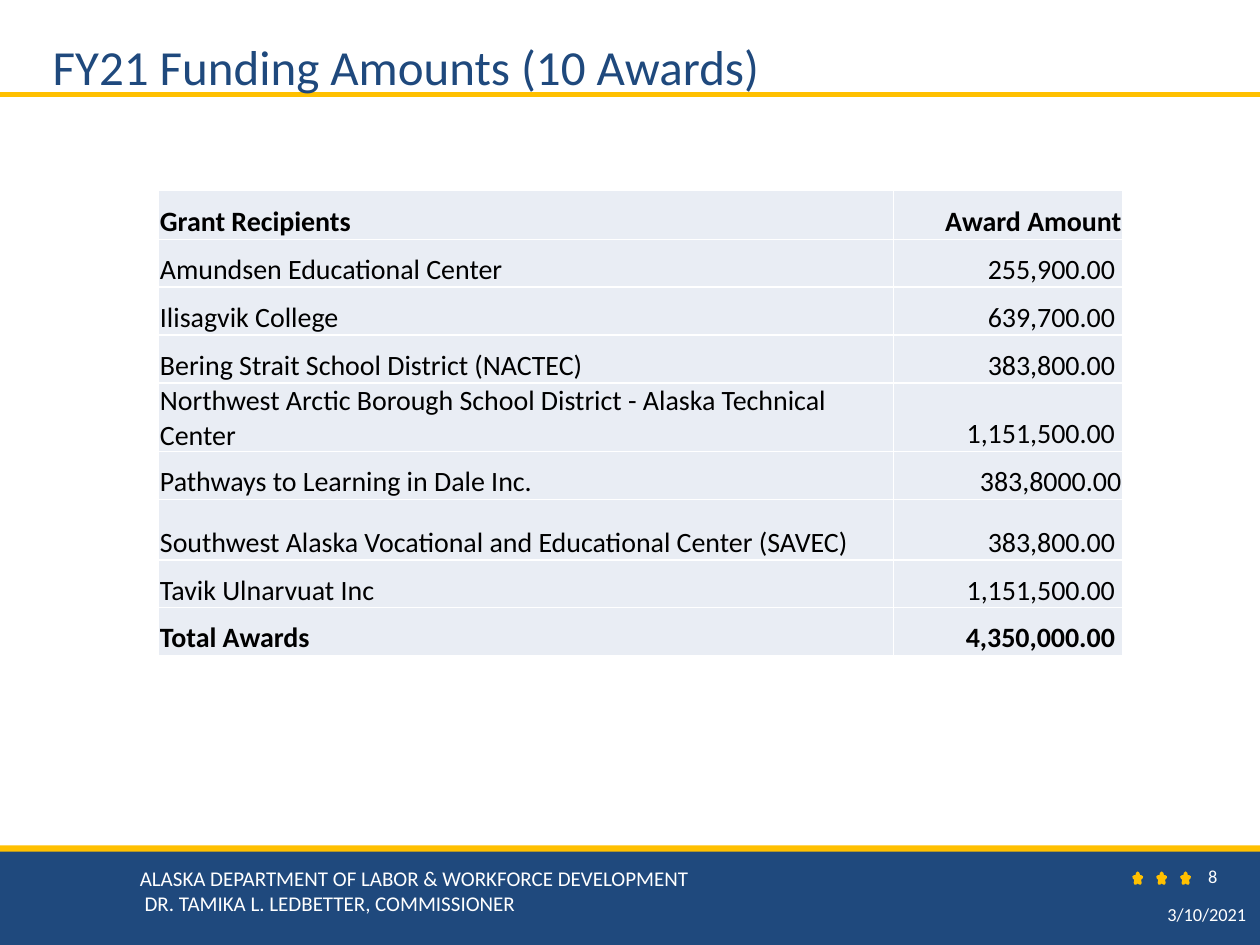
from dataclasses import dataclass

from lxml.etree import SubElement
from pptx import Presentation
from pptx.dml.color import RGBColor
from pptx.enum.shapes import MSO_CONNECTOR, MSO_SHAPE
from pptx.enum.text import MSO_ANCHOR, PP_ALIGN
from pptx.oxml.ns import qn
from pptx.util import Inches, Pt

FONT = "Calibri"
NAVY, GOLD, WHITE, BLACK, PALE = "1F497D", "FFC000", "FFFFFF", "000000", "E9EDF4"
COLUMN_WIDTHS = (5.83, 1.82)
ROW_HEIGHTS = (0.39, 0.38, 0.38, 0.38, 0.38, 0.38, 0.48, 0.38, 0.38)


@dataclass
class Award:
    recipient: str
    amount: str
    bold: bool = False


@dataclass
class Label:
    left: float
    top: float
    width: float
    height: float
    lines: tuple[str, ...]
    size: float
    color: str = WHITE
    align: PP_ALIGN = PP_ALIGN.LEFT
    anchor: MSO_ANCHOR = MSO_ANCHOR.TOP
    inset: bool = False


AWARDS = [
    Award("Grant Recipients", "Award Amount", True),
    Award("Amundsen Educational Center", "255,900.00 "),
    Award("Ilisagvik College", "639,700.00 "),
    Award("Bering Strait School District (NACTEC)", "383,800.00 "),
    Award("Northwest Arctic Borough School District - Alaska Technical Center",
          "1,151,500.00 "),
    Award("Pathways to Learning in Dale Inc.", "383,8000.00"),
    Award("Southwest Alaska Vocational and Educational Center (SAVEC)", "383,800.00 "),
    Award("Tavik Ulnarvuat Inc", "1,151,500.00 "),
    Award("Total Awards", "4,350,000.00 ", True),
]

LABELS = [
    Label(8.16, 7.13, 1.83, 0.25, ("3/10/2021",), 10.5, align=PP_ALIGN.RIGHT,
          anchor=MSO_ANCHOR.MIDDLE, inset=True),
    Label(1.11, 6.87, 5.72, 0.4,
          ("ALASKA DEPARTMENT OF LABOR & WORKFORCE DEVELOPMENT",
           " DR. TAMIKA L. LEDBETTER, COMMISSIONER"), 12),
    Label(9.19, 6.87, 0.87, 0.18, ("8",), 10.5, align=PP_ALIGN.CENTER),
    Label(0.32, 0.24, 7.11, 1.28, ("FY21 Funding Amounts (10 Awards)",), 28,
          color=NAVY, inset=True),
]


def rgb(color: str) -> RGBColor:
    return RGBColor.from_string(color)


def style_paragraph(paragraph, size: float, color: str, align: PP_ALIGN,
                    bold: bool = False) -> None:
    paragraph.alignment = align
    font = paragraph.font
    font.name, font.size, font.bold = FONT, Pt(size), bold
    font.color.rgb = rgb(color)


def add_filled(slide, kind: MSO_SHAPE, left: float, top: float, width: float,
               height: float, color: str, line_width: float = 0) -> None:
    shape = slide.shapes.add_shape(
        kind, Inches(left), Inches(top), Inches(width), Inches(height))
    shape.shadow.inherit = False
    shape.fill.solid()
    shape.fill.fore_color.rgb = rgb(color)
    if line_width:
        shape.line.color.rgb = rgb(color)
        shape.line.width = Pt(line_width)
    else:
        shape.line.fill.background()


def add_title_rule(slide) -> None:
    rule = slide.shapes.add_connector(
        MSO_CONNECTOR.STRAIGHT, Inches(0), Inches(0.75), Inches(10), Inches(0.75))
    rule.line.color.rgb = rgb(GOLD)
    rule.line.width = Pt(3)
    SubElement(rule._element.spPr, qn("a:effectLst"))


def add_label(slide, label: Label) -> None:
    box = slide.shapes.add_textbox(Inches(label.left), Inches(label.top),
                                   Inches(label.width), Inches(label.height))
    frame = box.text_frame
    frame.word_wrap = True
    frame.vertical_anchor = label.anchor
    if not label.inset:
        frame.margin_left = frame.margin_right = Inches(0)
        frame.margin_top = frame.margin_bottom = Inches(0)
    frame.text = "\n".join(label.lines)
    for paragraph in frame.paragraphs:
        style_paragraph(paragraph, label.size, label.color, label.align)


def add_borders(cell) -> None:
    """Put a thin white line on all four sides, ahead of the cell's fill."""
    properties = cell._tc.get_or_add_tcPr()
    for index, side in enumerate(("lnL", "lnR", "lnT", "lnB")):
        line = SubElement(properties, qn(f"a:{side}"), w=str(Pt(1)))
        fill = SubElement(line, qn("a:solidFill"))
        SubElement(fill, qn("a:srgbClr"), val=WHITE)
        properties.insert(index, line)


def fill_cell(cell, text: str, align: PP_ALIGN, bold: bool) -> None:
    cell.margin_left = cell.margin_right = cell.margin_top = Inches(0.01)
    cell.margin_bottom = Inches(0)
    cell.vertical_anchor = MSO_ANCHOR.BOTTOM
    cell.fill.solid()
    cell.fill.fore_color.rgb = rgb(PALE)
    add_borders(cell)
    cell.text = text
    style_paragraph(cell.text_frame.paragraphs[0], 16, BLACK, align, bold)


def add_award_table(slide) -> None:
    table = slide.shapes.add_table(
        len(AWARDS), len(COLUMN_WIDTHS), Inches(1.26), Inches(1.51),
        Inches(sum(COLUMN_WIDTHS)), Inches(sum(ROW_HEIGHTS))).table
    table.first_row = table.horz_banding = False
    for column, width in zip(table.columns, COLUMN_WIDTHS):
        column.width = Inches(width)
    for row, height, award in zip(table.rows, ROW_HEIGHTS, AWARDS):
        row.height = Inches(height)
        fill_cell(row.cells[0], award.recipient, PP_ALIGN.LEFT, award.bold)
        fill_cell(row.cells[1], award.amount, PP_ALIGN.RIGHT, award.bold)


def main() -> None:
    presentation = Presentation()
    presentation.slide_width, presentation.slide_height = Inches(10), Inches(7.5)
    slide = presentation.slides.add_slide(presentation.slide_layouts[6])
    add_filled(slide, MSO_SHAPE.RECTANGLE, 0, 6.74, 10, 0.76, NAVY)
    add_title_rule(slide)
    add_filled(slide, MSO_SHAPE.RECTANGLE, 0, 6.71, 10, 0.05, GOLD)
    for index in range(3):
        add_filled(slide, MSO_SHAPE.STAR_5_POINT, 9 + 0.19 * index, 6.93,
                   0.06, 0.08, GOLD, line_width=2)
    for label in LABELS:
        add_label(slide, label)
    add_award_table(slide)
    presentation.save("out.pptx")


if __name__ == "__main__":
    main()
